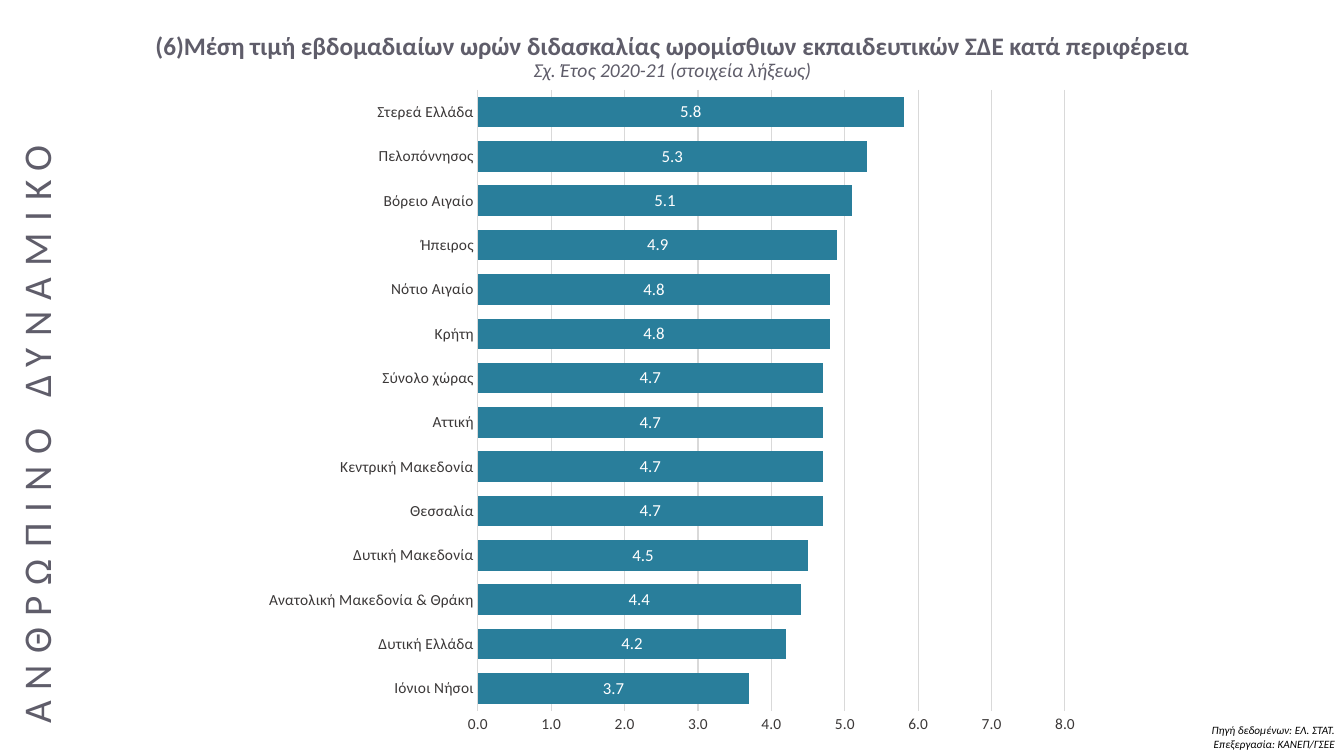
from dataclasses import dataclass

import pptx
import pptx.chart.data
import pptx.dml.color
import pptx.enum.chart
import pptx.enum.text
import pptx.oxml
import pptx.oxml.ns
import pptx.util

Inches = pptx.util.Inches
Align = pptx.enum.text.PP_ALIGN
Anchor = pptx.enum.text.MSO_ANCHOR


@dataclass(frozen=True)
class Theme:
    font: str = "Calibri"
    heading: str = "5F5D6A"
    bar: str = "297E9B"
    axis_text: str = "3B3838"
    grid: str = "D9D9D9"
    black: str = "000000"
    white: str = "FFFFFF"
    title_size: int = 18
    subtitle_size: int = 14
    side_size: int = 28
    axis_size: int = 11
    label_size: int = 12
    note_size: int = 8


THEME = Theme()

HOURS_BY_REGION = {
    "Ιόνιοι Νήσοι": 3.7,
    "Δυτική Ελλάδα": 4.2,
    "Ανατολική Μακεδονία & Θράκη": 4.4,
    "Δυτική Μακεδονία": 4.5,
    "Θεσσαλία": 4.7,
    "Κεντρική Μακεδονία": 4.7,
    "Αττική": 4.7,
    "Σύνολο χώρας": 4.7,
    "Κρήτη": 4.8,
    "Νότιο Αιγαίο": 4.8,
    "Ήπειρος": 4.9,
    "Βόρειο Αιγαίο": 5.1,
    "Πελοπόννησος": 5.3,
    "Στερεά Ελλάδα": 5.8,
}


def rgb(value):
    return pptx.dml.color.RGBColor.from_string(value)


def style_font(font, size, color, bold=False, italic=False):
    font.name = THEME.font
    font.size = pptx.util.Pt(size)
    font.color.rgb = rgb(color)
    font.bold = bold
    font.italic = italic


def style_line(line, color):
    line.color.rgb = rgb(color)
    line.width = pptx.util.Pt(0.75)


def add_span(para, text, size, color, **style):
    span = para.add_run()
    span.text = text
    style_font(span.font, size, color, **style)
    return span


def place(shape, box):
    shape.left, shape.top, shape.width, shape.height = map(Inches, box)


def first_para(shape, align, anchor):
    frame = shape.text_frame
    frame.word_wrap = True
    frame.auto_size = pptx.enum.text.MSO_AUTO_SIZE.NONE
    frame.vertical_anchor = anchor
    para = frame.paragraphs[0]
    para.alignment = align
    return para


def add_title(page, box):
    title = page.shapes.title
    place(title, box)
    para = first_para(title, Align.CENTER, Anchor.MIDDLE)
    para.line_spacing = 0.9
    add_span(para, "(6)Μέση τιμή εβδομαδιαίων ωρών διδασκαλίας ωρομίσθιων "
             "εκπαιδευτικών ΣΔΕ κατά περιφέρεια",
             THEME.title_size, THEME.heading, bold=True)
    para.add_line_break()
    add_span(para, "Σχ. Έτος 2020-21 (στοιχεία λήξεως)",
             THEME.subtitle_size, THEME.heading, italic=True)


def add_side_heading(page, box):
    heading = page.shapes.add_textbox(*map(Inches, box))
    heading.rotation = 270
    para = first_para(heading, Align.CENTER, Anchor.MIDDLE)
    para.line_spacing = 0.9
    span = add_span(para, "ΑΝΘΡΩΠΙΝΟ ΔΥΝΑΜΙΚΟ", THEME.side_size, THEME.heading)
    span.font._element.set("spc", "800")  # letter spacing, 8 pt


def add_source_note(page, box):
    note = page.shapes.add_textbox(*map(Inches, box))
    para = first_para(note, Align.RIGHT, Anchor.TOP)
    lines = ("Πηγή δεδομένων: ΕΛ. ΣΤΑΤ.", "Επεξεργασία: ΚΑΝΕΠ/ΓΣΕΕ")
    for index, text in enumerate(lines):
        if index:
            para.add_line_break()
        add_span(para, text, THEME.note_size, THEME.black, italic=True)


def set_plot_layout(chart, x, y, w, h):
    """Fix the inner plot area, as fractions of the chart box."""
    plot_area = chart._chartSpace.chart.plotArea
    for old in plot_area.findall(pptx.oxml.ns.qn("c:layout")):
        plot_area.remove(old)
    plot_area.insert(0, pptx.oxml.parse_xml(
        f'<c:layout {pptx.oxml.ns.nsdecls("c")}><c:manualLayout>'
        '<c:layoutTarget val="inner"/><c:xMode val="edge"/><c:yMode val="edge"/>'
        f'<c:x val="{x}"/><c:y val="{y}"/><c:w val="{w}"/><c:h val="{h}"/>'
        '</c:manualLayout></c:layout>'))


def add_hours_chart(page, box):
    data = pptx.chart.data.CategoryChartData(number_format="0.0")
    data.categories = HOURS_BY_REGION.keys()
    data.add_series("Series 1", HOURS_BY_REGION.values())
    chart = page.shapes.add_chart(
        pptx.enum.chart.XL_CHART_TYPE.BAR_STACKED, *map(Inches, box), data).chart
    chart.has_legend = False
    chart.has_title = False
    style_font(chart.font, 10, THEME.black)
    set_plot_layout(chart, 0.268, 0.02, 0.7, 0.926)

    # Axes
    for axis in (chart.category_axis, chart.value_axis):
        axis.major_tick_mark = pptx.enum.chart.XL_TICK_MARK.NONE
        axis.minor_tick_mark = pptx.enum.chart.XL_TICK_MARK.NONE
        style_font(axis.tick_labels.font, THEME.axis_size, THEME.axis_text)
    style_line(chart.category_axis.format.line, THEME.grid)
    values = chart.value_axis
    values.minimum_scale, values.maximum_scale, values.major_unit = 0, 8, 1
    values.format.line.fill.background()
    values.has_major_gridlines = True
    style_line(values.major_gridlines.format.line, THEME.grid)
    values.tick_labels.number_format = "#,##0.0"
    values.tick_labels.number_format_is_linked = False

    # Bars and their labels
    plot = chart.plots[0]
    plot.gap_width, plot.overlap = 45, 100
    plot.vary_by_categories = False
    bars = plot.series[0]
    bars.format.fill.solid()
    bars.format.fill.fore_color.rgb = rgb(THEME.bar)
    labels = bars.data_labels
    labels.show_value = True
    labels.position = pptx.enum.chart.XL_LABEL_POSITION.CENTER
    labels.number_format = "0.0"
    labels.number_format_is_linked = False
    style_font(labels.font, THEME.label_size, THEME.white)


def main():
    deck = pptx.Presentation()
    deck.slide_width, deck.slide_height = Inches(13.33), Inches(7.5)
    page = deck.slides.add_slide(deck.slide_layouts[5])
    add_source_note(page, (7.39, 7.13, 5.95, 0.37))
    add_title(page, (0.92, 0, 11.5, 1.14))
    add_hours_chart(page, (2.51, 0.76, 8.32, 6.65))
    add_side_heading(page, (-3, 3.74, 6.76, 1.14))
    deck.save("out.pptx")


if __name__ == "__main__":
    main()
